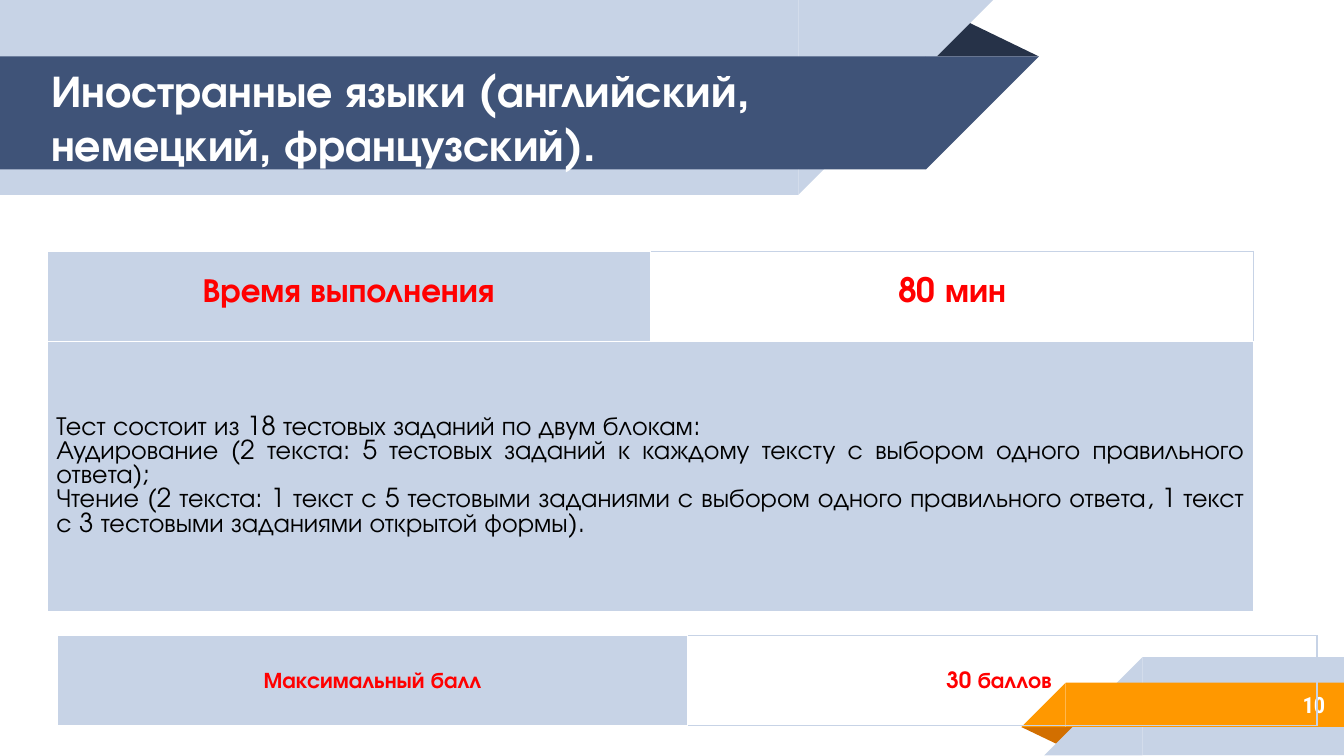
from lxml.etree import SubElement
from pptx import Presentation
from pptx.dml.color import RGBColor
from pptx.enum.shapes import MSO_SHAPE
from pptx.enum.text import MSO_ANCHOR, MSO_AUTO_SIZE, PP_ALIGN
from pptx.oxml.ns import qn
from pptx.util import Inches, Pt

WHITE = RGBColor(0xFF, 0xFF, 0xFF)
BLACK = RGBColor(0x00, 0x00, 0x00)
RED = RGBColor(0xFF, 0x00, 0x00)
PALE = RGBColor(0xC7, 0xD3, 0xE6)
NAVY = RGBColor(0x3F, 0x53, 0x78)
DARK = RGBColor(0x26, 0x32, 0x48)
ORANGE = RGBColor(0xFF, 0x98, 0x00)
BROWN = RGBColor(0xD2, 0x6F, 0x00)

# Content
TITLE = "Иностранные языки (английский, немецкий, французский)."
PAGE_NUMBER = "10"
TIME_ROW = ["Время выполнения", "80 мин"]
SCORE_ROW = ["Максимальный балл", "30 баллов "]
TEST_PARTS = [
    "Тест состоит из 18 тестовых заданий по двум блокам: ",
    "Аудирование (2 текста: 5 тестовых заданий к каждому тексту с выбором "
    "одного правильного ответа); ",
    "Чтение (2 текста: 1 текст с 5 тестовыми заданиями с выбором одного "
    "правильного ответа, 1 текст с 3 тестовыми заданиями открытой формы). ",
]

# Text formats
HEADING = dict(name="TeX Gyre Adventor", size=Pt(24), bold=True, color=WHITE)
NUMBER = dict(name="Roboto Condensed", size=Pt(12), bold=True, color=WHITE)
TIME = dict(HEADING, size=Pt(18), color=RED)
SCORE = dict(TIME, size=Pt(12))
DETAILS = dict(TIME, size=Pt(14), bold=False, color=BLACK)

# Bands: left, top, width, height, colour; a square corner slants one end
TOP_BANDS = [(0, 0, 5.94, 1.45, PALE), (0, 0.42, 6.89, 0.84, NAVY)]
BOTTOM_BANDS = [(8.5, 4.89, 1.5, 0.73, PALE), (7.93, 5.08, 2.08, 0.33, ORANGE)]


def add_part(page, kind, left, top, width, height, color, rotation=0):
    part = page.shapes.add_shape(
        kind, Inches(left), Inches(top), Inches(width), Inches(height))
    part.shadow.inherit = False
    part.fill.solid()
    part.fill.fore_color.rgb = color
    part.line.fill.background()
    part.rotation = rotation
    return part


def add_fold(page, left, top, width, height, color, rotation=0):
    fold = add_part(page, MSO_SHAPE.ISOSCELES_TRIANGLE,
                    left, top, width, height, color, rotation)
    fold.adjustments[0] = 0.32


def add_band(page, left, top, width, height, color, slant_right):
    add_part(page, MSO_SHAPE.RECTANGLE, left, top, width, height, color)
    corner_left = left + width if slant_right else left - height
    add_part(page, MSO_SHAPE.RIGHT_TRIANGLE, corner_left, top, height, height,
             color, 90 if slant_right else 270)


def write(frame, lines, style, alignment, spacing=1.0):
    for index, line in enumerate(lines):
        para = frame.paragraphs[0] if index == 0 else frame.add_paragraph()
        para.alignment = alignment
        para.line_spacing = spacing
        span = para.add_run()
        span.text = line
        for key, value in style.items():
            if key == "color":
                span.font.color.rgb = value
            else:
                setattr(span.font, key, value)


def set_frame(frame):
    values = dict(word_wrap=True, auto_size=MSO_AUTO_SIZE.NONE,
                  vertical_anchor=MSO_ANCHOR.MIDDLE)
    for side in ("left", "top", "right", "bottom"):
        values["margin_" + side] = Inches(0.1)
    for key, value in values.items():
        setattr(frame, key, value)


def set_cell(cell, fill, edges, vertical_margin=0.08):
    values = dict(vertical_anchor=MSO_ANCHOR.MIDDLE,
                  margin_left=Inches(0.07), margin_right=Inches(0.07),
                  margin_top=Inches(vertical_margin),
                  margin_bottom=Inches(vertical_margin))
    for key, value in values.items():
        setattr(cell, key, value)
    properties = cell._tc.get_or_add_tcPr()
    for side, color in zip("LRTB", edges):
        line = SubElement(properties, qn("a:ln" + side), w=str(Pt(0.75)))
        solid = SubElement(line, qn("a:solidFill"))
        SubElement(solid, qn("a:srgbClr"), val=str(color))
    if fill is None:
        cell.fill.background()
    else:
        cell.fill.solid()
        cell.fill.fore_color.rgb = fill


def add_grid(page, left, top, width, heights):
    grid = page.shapes.add_table(
        len(heights), 2, Inches(left), Inches(top),
        Inches(width), Inches(sum(heights))).table
    grid.first_row = grid.horz_banding = False
    for row, height in zip(grid.rows, heights):
        row.height = Inches(height)
    return grid


def fill_pair(grid, texts, style, spacing, value_margin=0.08):
    label, value = grid.cell(0, 0), grid.cell(0, 1)
    set_cell(label, PALE, [WHITE] * 4)
    set_cell(value, None, [WHITE, PALE, PALE, PALE], value_margin)
    for cell, text in zip((label, value), texts):
        write(cell.text_frame, [text], style, PP_ALIGN.CENTER, spacing)


def main():
    # Widescreen page, 16 to 9
    deck = Presentation()
    deck.slide_width, deck.slide_height = Inches(10), Inches(10 * 9 / 16)
    page = deck.slides.add_slide(deck.slide_layouts[5])

    # Ribbons
    add_fold(page, 6.88, 0.14, 0.85, 0.28, DARK)
    for band in TOP_BANDS:
        add_band(page, *band, slant_right=True)
    add_fold(page, 7.6, 5.41, 0.43, 0.14, BROWN, 180)
    for band in BOTTOM_BANDS:
        add_band(page, *band, slant_right=False)

    # Title, brought in front of the ribbons
    title = page.shapes.title
    title.left, title.top = Inches(0.28), Inches(0.45)
    title.width, title.height = Inches(7.09), Inches(0.84)
    title.element.getparent().append(title.element)
    set_frame(title.text_frame)
    write(title.text_frame, [TITLE], HEADING, PP_ALIGN.LEFT)

    # Page number
    box = page.shapes.add_textbox(
        Inches(8.33), Inches(5.07), Inches(1.63), Inches(0.35))
    set_frame(box.text_frame)
    write(box.text_frame, [PAGE_NUMBER], NUMBER, PP_ALIGN.RIGHT)

    # Time and test structure
    test_table = add_grid(page, 0.35, 1.87, 8.98, [0.67, 2.01])
    fill_pair(test_table, TIME_ROW, TIME, Pt(13))
    details = test_table.cell(1, 0)
    details.merge(test_table.cell(1, 1))
    for column in range(2):
        set_cell(test_table.cell(1, column), PALE, [WHITE] * 4)
    write(details.text_frame, TEST_PARTS, DETAILS, PP_ALIGN.JUSTIFY, Pt(13))

    # Maximum score
    score_table = add_grid(page, 0.43, 4.73, 9.37, [0.67])
    fill_pair(score_table, SCORE_ROW, SCORE, 1.15, value_margin=0)

    deck.save("out.pptx")


if __name__ == "__main__":
    main()
